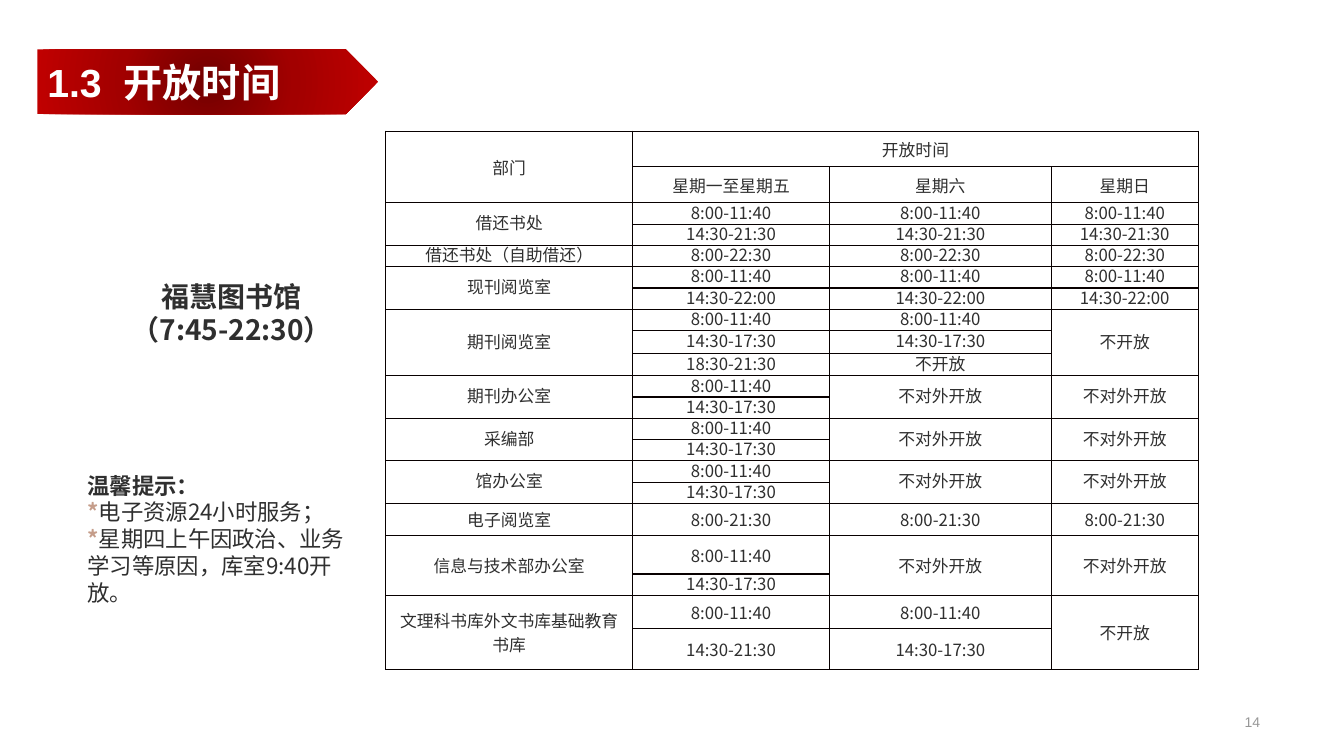
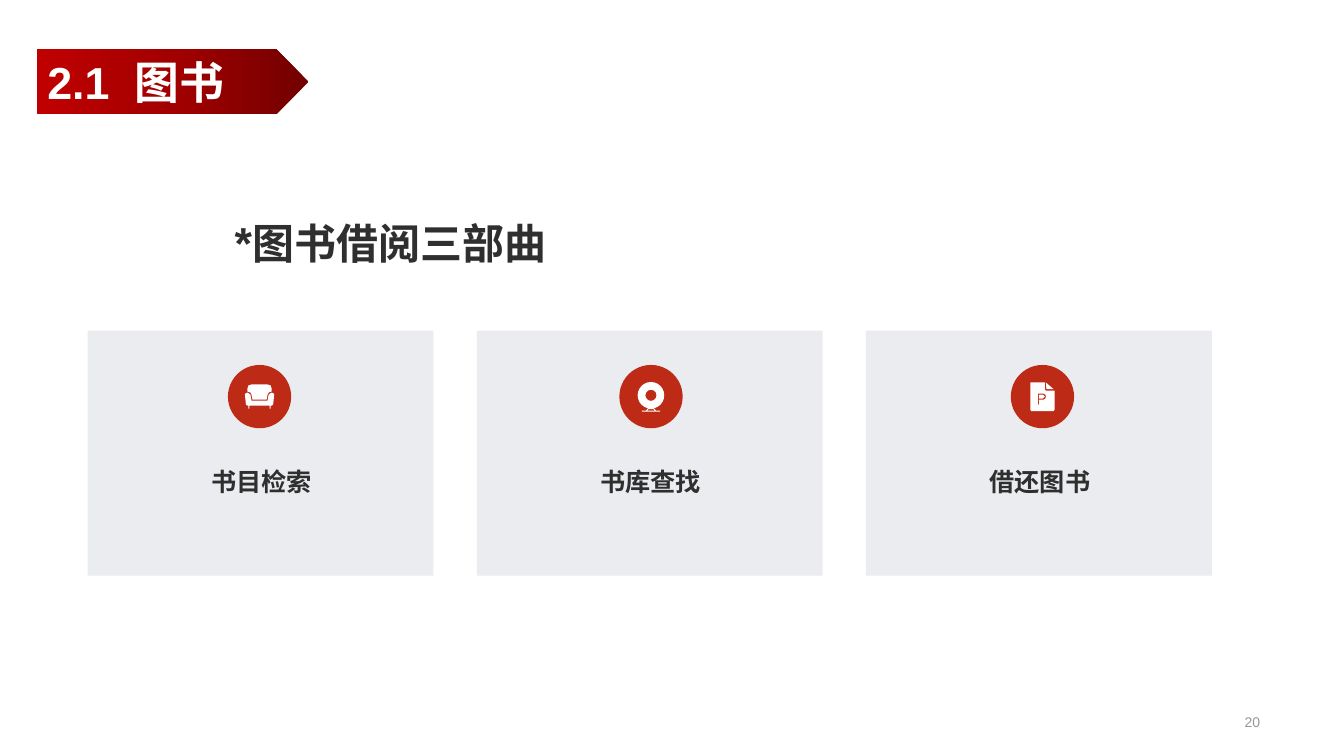
from lxml import etree
from pptx import Presentation
from pptx.dml.color import RGBColor
from pptx.enum.shapes import MSO_SHAPE
from pptx.enum.text import MSO_ANCHOR, PP_ALIGN
from pptx.oxml.ns import qn
from pptx.util import Pt

PLATE, RECT = MSO_SHAPE.PENTAGON, MSO_SHAPE.RECTANGLE
OVAL, DONUT = MSO_SHAPE.OVAL, MSO_SHAPE.DONUT
TOP, MIDDLE, BOTTOM = MSO_ANCHOR.TOP, MSO_ANCHOR.MIDDLE, MSO_ANCHOR.BOTTOM
LEFT, CENTER, RIGHT = PP_ALIGN.LEFT, PP_ALIGN.CENTER, PP_ALIGN.RIGHT

INK = RGBColor(0x2F, 0x2F, 0x2F)
WHITE = RGBColor(0xFF, 0xFF, 0xFF)
GRAY = RGBColor(0x97, 0x97, 0x97)
STAR = RGBColor(0xC5, 0x9D, 0x8A)
RED = RGBColor(0xBD, 0x2B, 0x16)
SLATE = RGBColor(0x77, 0x84, 0x95)
RULE = RGBColor(0x08, 0x00, 0x00)
STOPS = (
    (0, RGBColor(0x72, 0x00, 0x00)),
    (50, RGBColor(0xA2, 0x00, 0x00)),
    (100, RGBColor(0xC0, 0x00, 0x00)),
)
LATIN, HAN = "Arial", "Noto Sans CJK SC"

UP, BACK = "^", "<"
AM, PM, LATE = "8:00-11:40", "14:30-17:30", "14:30-21:30"
NIGHT, ALL, EVE = "14:30-22:00", "8:00-22:30", "8:00-21:30"
SHUT, STAFF = "不开放", "不对外开放"


def office(name):
    return [[name, AM, STAFF, STAFF], [UP, PM, UP, UP]]


HOURS = [
    ["部门", "开放时间", BACK, BACK],
    [UP, "星期一至星期五", "星期六", "星期日"],
    ["借还书处", AM, AM, AM],
    [UP, LATE, LATE, LATE],
    ["借还书处（自助借还）", ALL, ALL, ALL],
    ["现刊阅览室", AM, AM, AM],
    [UP, NIGHT, NIGHT, NIGHT],
    ["期刊阅览室", AM, AM, SHUT],
    [UP, PM, PM, UP],
    [UP, "18:30-21:30", SHUT, UP],
    *office("期刊办公室"),
    *office("采编部"),
    *office("馆办公室"),
    ["电子阅览室", EVE, EVE, EVE],
    *office("信息与技术部办公室"),
    ["文理科书库外文书库基础教育书库", AM, AM, SHUT],
    [UP, LATE, PM, UP],
]
WIDTHS = [176.5, 140.5, 158.5, 105]
SLIM = 15.2
HEIGHTS = [25.2, 25.9] + [SLIM] * 6 + [16.6, 15.8] + [SLIM] * 6
HEIGHTS += [23, 27.4, SLIM, 23.8, 29.5]


def mirror(half):
    return half + [(-x, y) for x, y in reversed(half)]


SOFA = [
    mirror([(8, 4), (9, -2), (12, -4), (14, -3), (14.5, -2), (13.5, 8),
            (12, 9), (11, 9), (11, 12), (10, 12), (10, 9)]),
    mirror([(8, -12), (11, -11), (12, -8), (12, -5), (9, -4), (8, -2), (7, 3)]),
]
STAND = [
    mirror([(3, 11.5), (5, 14), (9, 14), (9, 15)]),
    mirror([(2.5, 12.5), (4, 14)]),
]
PAGE = [
    [(-12, -14), (2.5, -14), (2.5, -7), (3.5, -6), (12, -6), (12, 13),
     (11, 14.5), (-11, 14.5), (-12, 13)],
    [(3.5, -14), (11, -7.5), (4, -7.5)],
    [(-4.5, -3), (1, -3), (3, -2), (3.5, 0), (3, 2), (1, 3), (-3.5, 3),
     (-3.5, 8), (-4.5, 8)],
    [(-3.5, -2), (0.5, -2), (2.5, 0), (0.5, 2), (-3.5, 2)],
]


def put(para, text, size=12, font=HAN, color=INK, bold=False):
    run = para.add_run()
    run.text = text
    run.font.size = Pt(size)
    run.font.name = font
    run.font.bold = bold
    run.font.color.rgb = color
    etree.SubElement(run.font._element, qn("a:ea"), typeface=HAN)


def add(node, tag, **attrs):
    return etree.SubElement(node, qn(tag), **attrs)


class Deck:
    def __init__(self):
        self.prs = Presentation()
        self.prs.slide_width, self.prs.slide_height = Pt(960), Pt(540)
        self.slide = None

    def start(self, num, name, page, width, size, radial=False):
        self.slide = self.prs.slides.add_slide(self.prs.slide_layouts[6])
        plate = self.shape(PLATE, 26.7, 35.3, width, 46.2, RED)
        self.shade(plate, radial)
        frame = plate.text_frame
        frame.vertical_anchor = MIDDLE
        frame.word_wrap = False
        para = frame.paragraphs[0]
        para.alignment = LEFT
        tabs = add(para._p.get_or_add_pPr(), "a:tabLst")
        add(tabs, "a:tab", pos=str(Pt(size * 1.95)), algn="l")
        put(para, f"{num}\t{name}", size=size, font=LATIN, color=WHITE, bold=True)
        self.text([[(page, {})]], 697.7, 506.9, 209.5, 17.3, anchor=MIDDLE,
                  align=RIGHT, size=10, font=LATIN, color=GRAY)

    def shade(self, shape, radial):
        shape.fill.gradient()
        grad = shape._element.spPr.find(qn("a:gradFill"))
        for child in list(grad):
            grad.remove(child)
        stops = add(grad, "a:gsLst")
        for pos, color in STOPS:
            stop = add(stops, "a:gs", pos=str(pos * 1000))
            add(stop, "a:srgbClr", val=str(color))
        if radial:
            ring = add(grad, "a:path", path="circle")
            add(ring, "a:fillToRect", **dict.fromkeys("ltrb", "50000"))
        else:
            add(grad, "a:lin", ang="10800000", scaled="0")

    def paint(self, shape, color, alpha=None):
        shape.shadow.inherit = False
        shape.fill.solid()
        shape.fill.fore_color.rgb = color
        shape.line.fill.background()
        if alpha:
            tone = shape._element.spPr.find(".//" + qn("a:srgbClr"))
            add(tone, "a:alpha", val=str(alpha * 1000))
        return shape

    def shape(self, kind, x, y, w, h, color, alpha=None):
        item = self.slide.shapes.add_shape(kind, Pt(x), Pt(y), Pt(w), Pt(h))
        return self.paint(item, color, alpha)

    def text(self, paras, x, y, w, h, anchor=TOP, align=LEFT, pad=7.2,
             space=1.0, **style):
        box = self.slide.shapes.add_textbox(Pt(x), Pt(y), Pt(w), Pt(h))
        frame = box.text_frame
        frame.word_wrap = True
        frame.vertical_anchor = anchor
        frame.margin_left = frame.margin_right = Pt(pad)
        frame.margin_top = frame.margin_bottom = Pt(pad / 2)
        for i, runs in enumerate(paras):
            para = frame.add_paragraph() if i else frame.paragraphs[0]
            para.alignment = align
            para.line_spacing = space
            for words, extra in runs:
                put(para, words, **{**style, **extra})

    def icon(self, loops, x, y):
        unit = Pt(0.72)
        spots = [[(Pt(x) + a * unit, Pt(y) + b * unit) for a, b in loop]
                 for loop in loops]
        pen = self.slide.shapes.build_freeform(*spots[0][0])
        for i, loop in enumerate(spots):
            if i:
                pen.move_to(*loop[0])
            pen.add_line_segments(loop[1:], close=True)
        self.paint(pen.convert_to_shape(), WHITE)

    def edge(self, cell):
        props = cell._tc.get_or_add_tcPr()
        for i, tag in enumerate(("a:lnL", "a:lnR", "a:lnT", "a:lnB")):
            line = etree.Element(qn(tag), w=str(Pt(1)))
            add(add(line, "a:solidFill"), "a:srgbClr", val=str(RULE))
            props.insert(i, line)

    def table(self, rows, x, y, widths, heights):
        frame = self.slide.shapes.add_table(
            len(rows), len(widths), Pt(x), Pt(y), Pt(sum(widths)), Pt(sum(heights)))
        grid = frame.table
        grid.first_row = grid.horz_banding = False
        for col, width in zip(grid.columns, widths):
            col.width = Pt(width)
        for row, height in zip(grid.rows, heights):
            row.height = Pt(height)
        for r, row in enumerate(rows):
            for c, words in enumerate(row):
                cell = grid.cell(r, c)
                cell.fill.background()
                self.edge(cell)
                cell.margin_left = cell.margin_right = Pt(5)
                cell.margin_top = cell.margin_bottom = 0
                if words in (UP, BACK):
                    continue
                cell.vertical_anchor = MIDDLE
                para = cell.text_frame.paragraphs[0]
                para.alignment = CENTER
                if heights[r] < 17:
                    para.line_spacing = Pt(15)
                put(para, words)
                low, far = r, c
                while low + 1 < len(rows) and rows[low + 1][c] == UP:
                    low += 1
                while far + 1 < len(row) and row[far + 1] == BACK:
                    far += 1
                if (low, far) != (r, c):
                    cell.merge(grid.cell(low, far))


def hours(deck):
    deck.start("1.3", "开放时间", "14", 243.4, 28, radial=True)
    deck.text([[("福慧图书馆", {})], [("（7:45-22:30）", {})]],
              73.4, 195.8, 184.3, 56.2, align=CENTER, size=20, bold=True)
    deck.table(HOURS, 275.5, 93.8, WIDTHS, HEIGHTS)
    star = ("*", {"color": STAR, "bold": True})
    deck.text([
        [("温馨提示：", {"bold": True})],
        [star, ("电子资源24小时服务；", {})],
        [star, ("星期四上午因政治、业务学习等原因，库室9:40开放。", {})],
    ], 55.4, 333.4, 202.3, 85, size=16)


def books(deck):
    deck.start("2.1", "图书", "20", 193.7, 32)
    deck.text([[("*", {"size": 32}), ("图书借阅三部曲", {})]],
              162.7, 155.5, 617, 72.7, pad=5, space=0.9,
              size=30, font=LATIN, bold=True)
    cards = (("书目检索", SOFA), ("书库查找", STAND), ("借还图书", PAGE))
    for i, (name, loops) in enumerate(cards):
        left = 62.6 + 278 * i
        deck.shape(RECT, left, 236.2, 247, 175, SLATE, alpha=15)
        deck.text([[(name, {})]], left + 19.4, 327, 209.5, 31, anchor=BOTTOM,
                  align=CENTER, space=1.2, size=18, font=LATIN, bold=True)
        mid = 185.4 + 279.6 * i
        deck.shape(OVAL, mid - 22.6, 260.7, 45.2, 45.2, RED)
        if loops is STAND:
            lens = deck.shape(DONUT, mid - 9.5, 272.9, 19, 19, WHITE)
            lens.adjustments[0] = 0.29
        deck.icon(loops, mid, 283.3)


def main():
    deck = Deck()
    hours(deck)
    books(deck)
    deck.prs.save("out.pptx")


if __name__ == "__main__":
    main()
